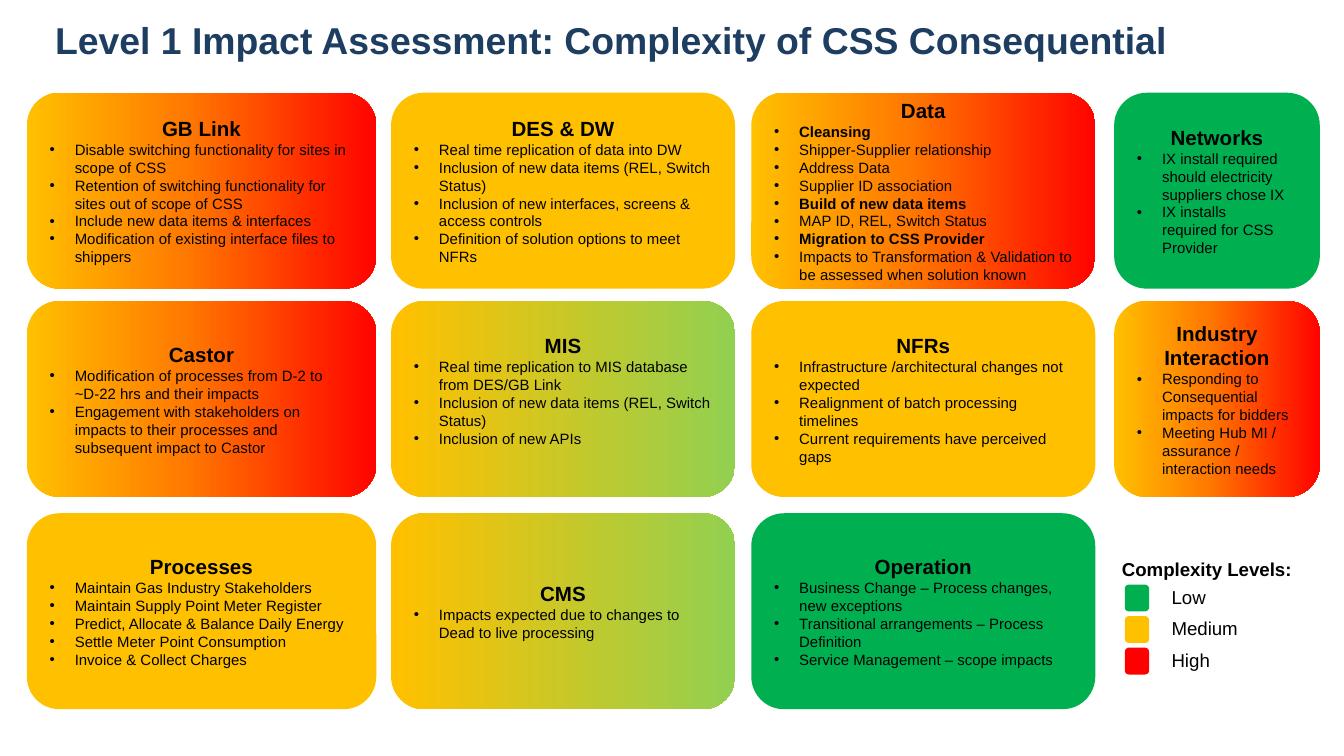
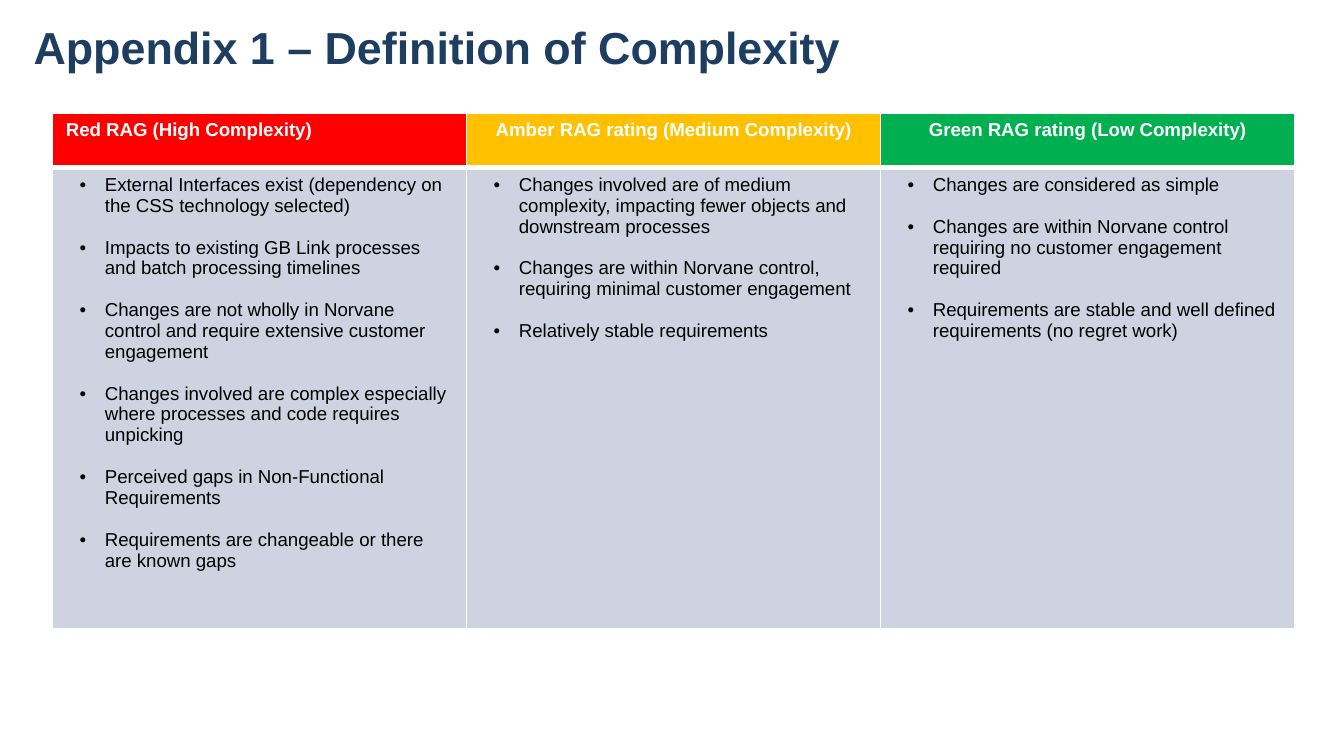
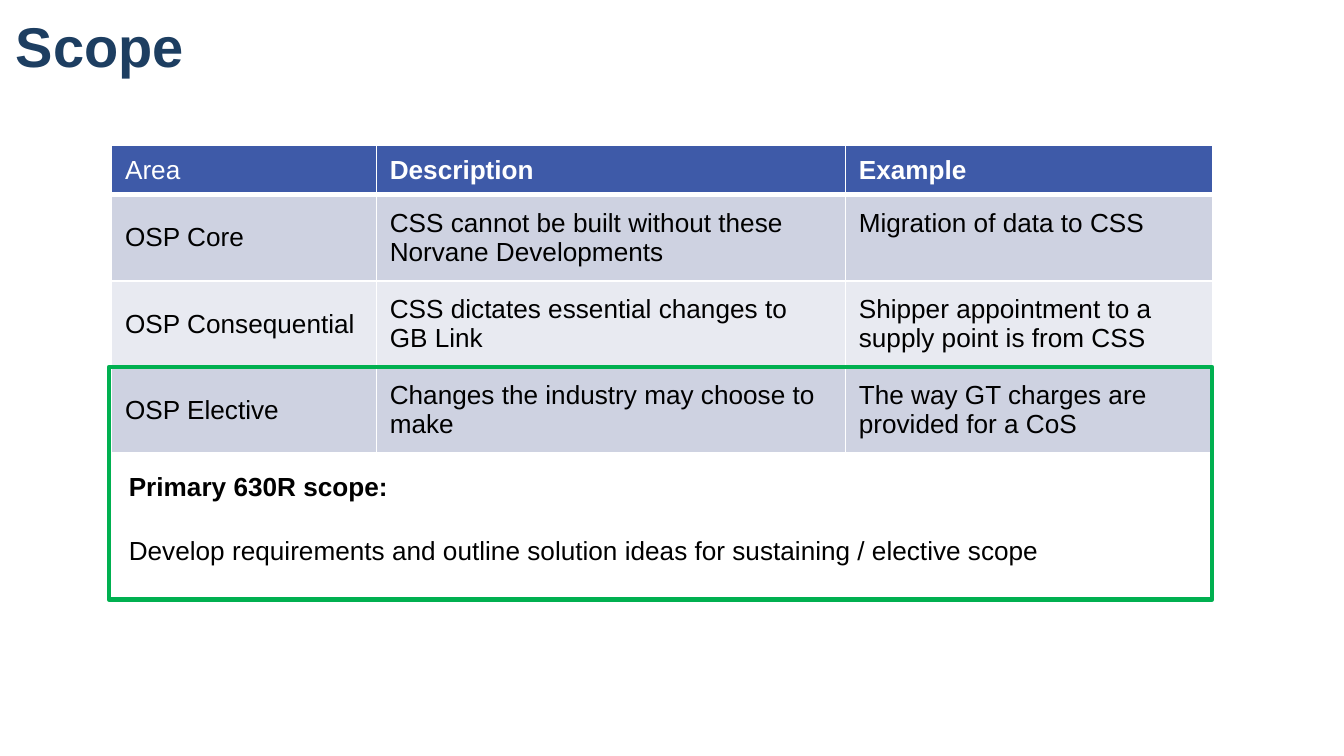
from copy import deepcopy
from lxml.etree import SubElement
from pptx import Presentation
from pptx.dml.color import RGBColor
from pptx.enum.shapes import MSO_SHAPE
from pptx.enum.text import MSO_ANCHOR, PP_ALIGN
from pptx.oxml.ns import qn
from pptx.util import Pt

# Colours
NAVY = RGBColor(0x1D, 0x3E, 0x61)
BLUE = RGBColor(0x3E, 0x5A, 0xA8)
GREEN = RGBColor(0x00, 0xB0, 0x50)
AMBER = RGBColor(0xFF, 0xC0, 0x00)
ORANGE = RGBColor(0xFF, 0x7A, 0x00)
SCARLET = RGBColor(0xFF, 0x03, 0x00)
RED = RGBColor(0xFF, 0x00, 0x00)
LIME = RGBColor(0x92, 0xD0, 0x50)
PALE = RGBColor(0xCE, 0xD2, 0xE1)
SOFT = RGBColor(0xE8, 0xEA, 0xF1)
BLACK = RGBColor(0x00, 0x00, 0x00)
WHITE = RGBColor(0xFF, 0xFF, 0xFF)

# Gradients, as (percent, colour) from left to right
HOT = [(0, AMBER), (45, ORANGE), (100, SCARLET)]
MILD = [(2, AMBER), (100, LIME)]

LEFT, MID = PP_ALIGN.LEFT, PP_ALIGN.CENTER
HANG = 13.5


def put(frame, text, size, bold=False, ink=BLACK, align=LEFT, dent=0, after=0):
    """Write one paragraph; a dent above zero makes it a bullet."""
    para = frame.paragraphs[-1]
    if para.runs:
        para = frame.add_paragraph()
    para.text = text
    look = {"alignment": align, "space_after": Pt(after)}
    for key, value in look.items():
        setattr(para, key, value)
    if dent:
        props = para._p.get_or_add_pPr()
        props.set("marL", str(Pt(dent)))
        props.set("indent", str(-Pt(HANG)))
        SubElement(props, qn("a:buFont"), typeface="Arial")
        SubElement(props, qn("a:buChar"), char="•")
    for run in para.runs:
        for key, value in {"name": "Arial", "size": Pt(size), "bold": bold}.items():
            setattr(run.font, key, value)
        run.font.color.rgb = ink
    for gap in para._p.findall(qn("a:br")):
        gap.insert(0, deepcopy(para.runs[0]._r.rPr))


def block(slide, kind, spot, fill=None, edge=None):
    """Add a shape with a solid, gradient or empty fill."""
    shape = slide.shapes.add_shape(kind, *map(Pt, spot))
    shape.shadow.inherit = False
    if edge:
        shape.line.color.rgb = edge
        shape.line.width = Pt(2.25)
    else:
        shape.line.fill.background()
    if fill is None:
        shape.fill.background()
    elif isinstance(fill, list):
        shape.fill.gradient()
        shape.fill.gradient_angle = 0
        stops = shape._element.spPr.find(qn("a:gradFill")).find(qn("a:gsLst"))
        stops.clear()
        for share, tone in fill:
            stop = SubElement(stops, qn("a:gs"), pos=str(share * 1000))
            SubElement(stop, qn("a:srgbClr"), val=str(tone))
    else:
        shape.fill.solid()
        shape.fill.fore_color.rgb = fill
    return shape


deck = Presentation()
deck.slide_width, deck.slide_height = Pt(720), Pt(405)
impact, terms, scope = [deck.slides.add_slide(deck.slide_layouts[6]) for _ in range(3)]

# Impact cards, row by row
COLS = [(14.4, 187.2), (209.5, 184.3), (402.5, 184.3), (596.9, 110.2)]
TOPS = [49.7, 161.3, 275]
HEADS = {"Cleansing", "Build of new data items", "Migration to CSS Provider"}
CARDS = [
    [
        ("GB Link", HOT, [
            "Disable switching functionality for sites in scope of CSS",
            "Retention of switching functionality for sites out of scope of CSS",
            "Include new data items & interfaces",
            "Modification of existing interface files to shippers"]),
        ("DES & DW", AMBER, [
            "Real time replication of data into DW",
            "Inclusion of new data items (REL, Switch Status)",
            "Inclusion of new interfaces, screens & access controls",
            "Definition of solution options to meet NFRs"]),
        ("Data", HOT, [
            "Cleansing",
            "Shipper-Supplier relationship",
            "Address Data",
            "Supplier ID association",
            "Build of new data items",
            "MAP ID, REL, Switch Status",
            "Migration to CSS Provider",
            "Impacts to Transformation & Validation to be assessed when solution known"]),
        ("Networks", GREEN, [
            "IX install required should electricity suppliers chose IX",
            "IX installs\vrequired for CSS Provider"]),
    ],
    [
        ("Castor", HOT, [
            "Modification of processes from D-2 to ~D-22 hrs and their impacts",
            "Engagement with stakeholders on impacts to their processes and "
            "subsequent impact to Castor"]),
        ("MIS", MILD, [
            "Real time replication to MIS database from DES/GB Link",
            "Inclusion of new data items (REL, Switch Status)",
            "Inclusion of new APIs"]),
        ("NFRs", AMBER, [
            "Infrastructure /architectural changes not expected",
            "Realignment of batch processing timelines",
            "Current requirements have perceived gaps"]),
        ("Industry Interaction", HOT, [
            "Responding to Consequential impacts for bidders",
            "Meeting Hub MI / assurance / interaction needs"]),
    ],
    [
        ("Processes", AMBER, [
            "Maintain Gas Industry Stakeholders",
            "Maintain Supply Point Meter Register",
            "Predict, Allocate & Balance Daily Energy",
            "Settle Meter Point Consumption",
            "Invoice & Collect Charges"]),
        ("CMS", MILD, [
            "Impacts expected due to changes to Dead to live processing"]),
        ("Operation", GREEN, [
            "Business Change – Process changes, new exceptions",
            "Transitional arrangements – Process Definition",
            "Service Management – scope impacts"]),
    ],
]
for top, row in zip(TOPS, CARDS):
    for (left, width), (name, fill, items) in zip(COLS, row):
        card = block(impact, MSO_SHAPE.ROUNDED_RECTANGLE, (left, top, width, 105), fill)
        frame = card.text_frame
        frame.word_wrap = True
        frame.vertical_anchor = MSO_ANCHOR.MIDDLE
        if name == "MIS":
            frame.margin_bottom = Pt(13)
        put(frame, name, 11, True, align=MID)
        for item in items:
            put(frame, item, 8, item in HEADS, dent=HANG)

# Text boxes: slide, place, inset, wrap, anchor, paragraphs
TOP, CENTRE = MSO_ANCHOR.TOP, MSO_ANCHOR.MIDDLE
texts = [
    (slide, (left, top, 684, 56.9), 0, True, CENTRE, [(name, size, True, NAVY)])
    for slide, left, top, size, name in [
        (impact, 29.5, -7.2, 20,
         "Level 1 Impact Assessment: Complexity of CSS Consequential"),
        (terms, 18, -3.6, 24, "Appendix 1 – Definition of Complexity"),
        (scope, 8.6, -4.3, 30, "Scope"),
    ]
]
texts.append((impact, (594, 295.2, 105.8, 19.4), 7.2, False, TOP,
              [("Complexity Levels:", 10, True)]))
texts.append((scope, (61.9, 248.5, 553, 74), 7.2, True, TOP, [
    ("Primary 630R scope:", 14, True, BLACK, LEFT, 0, 17.5),
    ("Develop requirements and outline solution ideas for sustaining / elective scope", 14)]))

# Legend
for step, (name, tone) in enumerate([("Low", GREEN), ("Medium", AMBER), ("High", RED)]):
    drop = step * 16.9
    block(impact, MSO_SHAPE.ROUNDED_RECTANGLE, (602.6, 313.2 + drop, 13, 14.4), tone)
    texts.append((impact, (620.6, 310.3 + drop, 50, 19.4), 7.2, False, TOP, [(name, 10)]))

# Tables; a cell that holds a list becomes bullets
RATING = [
    ["Red RAG (High Complexity)",
     "Amber RAG rating (Medium Complexity)",
     "Green RAG rating (Low Complexity)"],
    [
        ["External Interfaces exist (dependency on the CSS technology selected)",
         "Impacts to existing GB Link processes and batch processing timelines",
         "Changes are not wholly in Norvane control and require extensive customer engagement",
         "Changes involved are complex especially where processes and code requires unpicking",
         "Perceived gaps in Non-Functional Requirements",
         "Requirements are changeable or there are known gaps"],
        ["Changes involved are of medium complexity, impacting fewer objects and "
         "downstream processes",
         "Changes are within Norvane control, requiring minimal customer engagement",
         "Relatively stable requirements"],
        ["Changes are considered as simple",
         "Changes are within Norvane control requiring no customer engagement required",
         "Requirements are stable and well defined requirements (no regret work)"],
    ],
]
AREAS = [
    ["Area", "Description", "Example"],
    ["OSP Core", "CSS cannot be built without these Norvane Developments",
     "Migration of data to CSS"],
    ["OSP Consequential", "CSS dictates essential changes to GB Link",
     "Shipper appointment to a supply point is from CSS"],
    ["OSP Elective", "Changes the industry may choose to make",
     "The way GT charges are provided for a CoS"],
]
TABLES = [
    (terms, (28.1, 60.5), [221.8] * 3, [29.5, 247], RATING, 10, TOP,
     [RED, AMBER, GREEN], [LEFT, MID, MID]),
    (scope, (59.8, 77.8), [141.8, 251.3, 196.6], [26.6] + [46.1] * 3, AREAS, 14, CENTRE,
     [BLUE] * 3, [LEFT] * 3),
]
for slide, spot, wide, high, data, size, anchor, tones, sides in TABLES:
    area = (*spot, sum(wide), sum(high))
    grid = slide.shapes.add_table(len(high), len(wide), *map(Pt, area)).table
    grid.horz_banding = False
    for col, width in zip(grid.columns, wide):
        col.width = Pt(width)
    for r, height in enumerate(high):
        grid.rows[r].height = Pt(height)
        for c, value in enumerate(data[r]):
            cell = grid.cell(r, c)
            cell.vertical_anchor = anchor
            # White borders, thick below the header
            edges = {"L": 1, "R": 1, "T": 3 if r == 1 else 1, "B": 1 if r else 3}
            for side, weight in edges.items():
                line = SubElement(cell._tc.get_or_add_tcPr(), qn("a:ln" + side),
                                  w=str(Pt(weight)))
                SubElement(SubElement(line, qn("a:solidFill")), qn("a:srgbClr"),
                           val=str(WHITE))
            cell.fill.solid()
            cell.fill.fore_color.rgb = (PALE if r % 2 else SOFT) if r else tones[c]
            if r == 0:
                put(cell.text_frame, value, size, value != "Area", WHITE, sides[c])
            elif isinstance(value, list):
                for item in value:
                    put(cell.text_frame, item, size, dent=20.9,
                        after=0 if item == value[-1] else 11.2)
            else:
                put(cell.text_frame, value, size)
                if value == "Migration of data to CSS":
                    cell.margin_bottom = Pt(19)

# Frame around the elective scope
block(scope, MSO_SHAPE.RECTANGLE, (58.3, 196.6, 591.1, 124.6), edge=GREEN)

# Titles, legend labels and scope note
for slide, spot, inset, wrap, anchor, lines in texts:
    frame = slide.shapes.add_textbox(*map(Pt, spot)).text_frame
    form = {"word_wrap": wrap, "vertical_anchor": anchor,
            "margin_left": Pt(inset), "margin_right": Pt(inset),
            "margin_top": Pt(inset / 2), "margin_bottom": Pt(inset / 2)}
    for key, value in form.items():
        setattr(frame, key, value)
    for line in lines:
        put(frame, *line)

deck.save("out.pptx")
